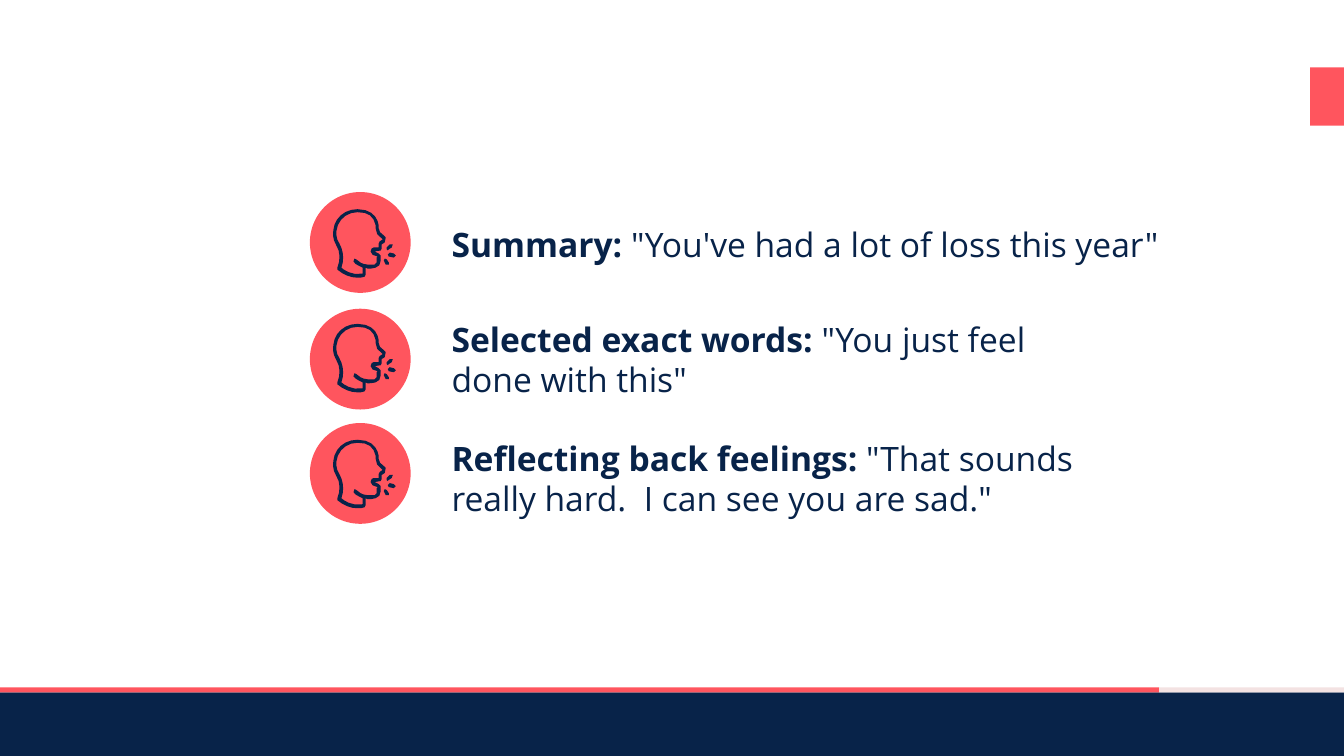
from math import ceil, dist

from pptx import Presentation
from pptx.dml.color import RGBColor
from pptx.enum.shapes import MSO_SHAPE
from pptx.enum.text import MSO_ANCHOR, MSO_AUTO_SIZE
from pptx.util import Cm, Pt

COLORS = {"navy": "082349", "coral": "FF555E", "blush": "F3E2E2"}
FONT = "Open Sans"

# Statements: label, quote, text top, text width, text height, circle top, head top (cm)
STATEMENTS = [
    ("Summary: ", "\"You've had a lot of loss this year\"",
     5.51, 18.64, 1.27, 4.84, 5.22),
    ("Selected exact words: ", "\"You just feel done with this\"",
     7.9, 17.04, 2.31, 7.78, 8.11),
    ("Reflecting back feelings: ",
     "\"That sounds really hard.  I can see you are sad.\"",
     10.9, 18.29, 2.31, 10.66, 11.03),
]
TEXT_LEFT, CIRCLE_LEFT, CIRCLE_SIZE, HEAD_LEFT = 11.13, 7.81, 2.54, 8.35

# Bars: left, top, width, height (cm), colour
BARS = [
    (0, 17.45, 33.87, 1.6, "navy"),
    (0, 17.32, 29.21, 0.13, "coral"),
    (29.21, 17.32, 4.66, 0.13, "blush"),
    (33.02, 1.7, 0.85, 1.47, "coral"),
]

# Glyph outlines on a grid: two numbers are a point, six a Bezier curve
GRID = 0.0254
LONGEST_CHORD = 6
HEAD_OUTER = [
    (54, 30), (52, 28), (49, 26, 47, 24, 47, 21),
    (47, 18), (46, 11, 41, 2, 26, 2), (13, 2, 3, 11, 2, 23),
    (1, 28, 2, 33, 5, 38), (9, 44, 9, 53, 6, 60), (6, 62),
    (12, 67, 19, 70, 26, 70), (28, 70, 31, 70, 33, 69), (34, 67),
    (34, 60), (36, 61), (38, 61, 41, 61, 44, 60),
    (47, 60, 49, 56, 49, 53), (49, 48), (47, 46), (43, 44),
    (45, 44, 47, 43, 49, 43), (50, 41), (50, 37), (53, 35),
]
HEAD_INNER = [
    (51, 32), (48, 34), (47, 36), (47, 40), (42, 40), (40, 41), (39, 44),
    (40, 46, 41, 49, 46, 49), (45, 50), (45, 53), (45, 55), (43, 57),
    (41, 57, 38, 57, 36, 57), (33, 57, 31, 56, 29, 55),
    (27, 54, 26, 53, 25, 52), (23, 51), (22, 54), (23, 56, 25, 57, 27, 58),
    (31, 60), (31, 66), (20, 68, 12, 62, 10, 60), (13, 52, 12, 43, 8, 36),
    (5, 32, 5, 28, 5, 24), (6, 13, 15, 5, 26, 5), (37, 5, 42, 9, 44, 18),
    (44, 21), (44, 25, 46, 29, 50, 31),
]
SOUND_RIGHT = [(62, 50), (64, 48), (62, 46), (58, 45), (56, 47), (57, 49)]
SOUND_LOW = [(54, 57), (57, 57), (57, 55), (55, 52), (53, 51), (52, 53)]
SOUND_HIGH = [(56, 43), (57, 42), (60, 40), (61, 37), (58, 37), (55, 40), (55, 42)]
GLYPHS = [[SOUND_RIGHT], [SOUND_LOW], [SOUND_HIGH], [HEAD_OUTER, HEAD_INNER]]


def color(name):
    return RGBColor.from_string(COLORS[name])


def paint(shape, name):
    shape.fill.solid()
    shape.fill.fore_color.rgb = color(name)
    shape.line.fill.background()
    shape.shadow.inherit = False


def add_filled(shapes, kind, left, top, width, height, name):
    shape = shapes.add_shape(kind, Cm(left), Cm(top), Cm(width), Cm(height))
    paint(shape, name)


def flatten(outline):
    """Turn points and Bezier curves into a list of points."""
    points = []
    for segment in outline:
        if len(segment) == 2:
            points.append(segment)
            continue
        start = points[-1]
        steps = ceil(dist(start, segment[-2:]) / LONGEST_CHORD)
        for step in range(1, steps + 1):
            t = step / steps
            u = 1 - t
            weights = (u ** 3, 3 * u * u * t, 3 * u * t * t, t ** 3)
            points.append(tuple(
                sum(weight * value for weight, value in
                    zip(weights, (start[axis], *segment[axis::2])))
                for axis in (0, 1)))
    return points


def add_glyph(shapes, outlines, left, top):
    contours = [[(Cm(left + x * GRID), Cm(top + y * GRID))
                 for x, y in flatten(outline)] for outline in outlines]
    builder = shapes.build_freeform(*contours[0][0])
    for index, contour in enumerate(contours):
        if index:
            builder.move_to(*contour[0])
        builder.add_line_segments(contour[1:], close=True)
    paint(builder.convert_to_shape(), "navy")


def add_statement(slide, label, quote, top, width, height):
    box = slide.shapes.add_textbox(Cm(TEXT_LEFT), Cm(top), Cm(width), Cm(height))
    frame = box.text_frame
    frame.word_wrap = True
    frame.auto_size = MSO_AUTO_SIZE.SHAPE_TO_FIT_TEXT
    frame.vertical_anchor = MSO_ANCHOR.MIDDLE
    paragraph = frame.paragraphs[0]
    for text, bold in ((label, True), (quote, False)):
        run = paragraph.add_run()
        run.text = text
        run.font.bold = bold
    paragraph.font.name = FONT
    paragraph.font.size = Pt(24)
    paragraph.font.color.rgb = color("navy")


def main():
    presentation = Presentation()
    presentation.slide_width, presentation.slide_height = Cm(33.87), Cm(19.05)
    slide = presentation.slides.add_slide(presentation.slide_layouts[6])

    # Footer bars and side tab
    for bar in BARS:
        add_filled(slide.shapes, MSO_SHAPE.RECTANGLE, *bar)

    # Statements
    for label, quote, top, width, height, *_ in STATEMENTS:
        add_statement(slide, label, quote, top, width, height)

    # Speaking-head icons
    for *_, circle_top, head_top in STATEMENTS:
        icon = slide.shapes.add_group_shape()
        add_filled(icon.shapes, MSO_SHAPE.OVAL, CIRCLE_LEFT, circle_top,
                   CIRCLE_SIZE, CIRCLE_SIZE, "coral")
        for outlines in GLYPHS:
            add_glyph(icon.shapes, outlines, HEAD_LEFT, head_top)

    presentation.save("out.pptx")


if __name__ == "__main__":
    main()
